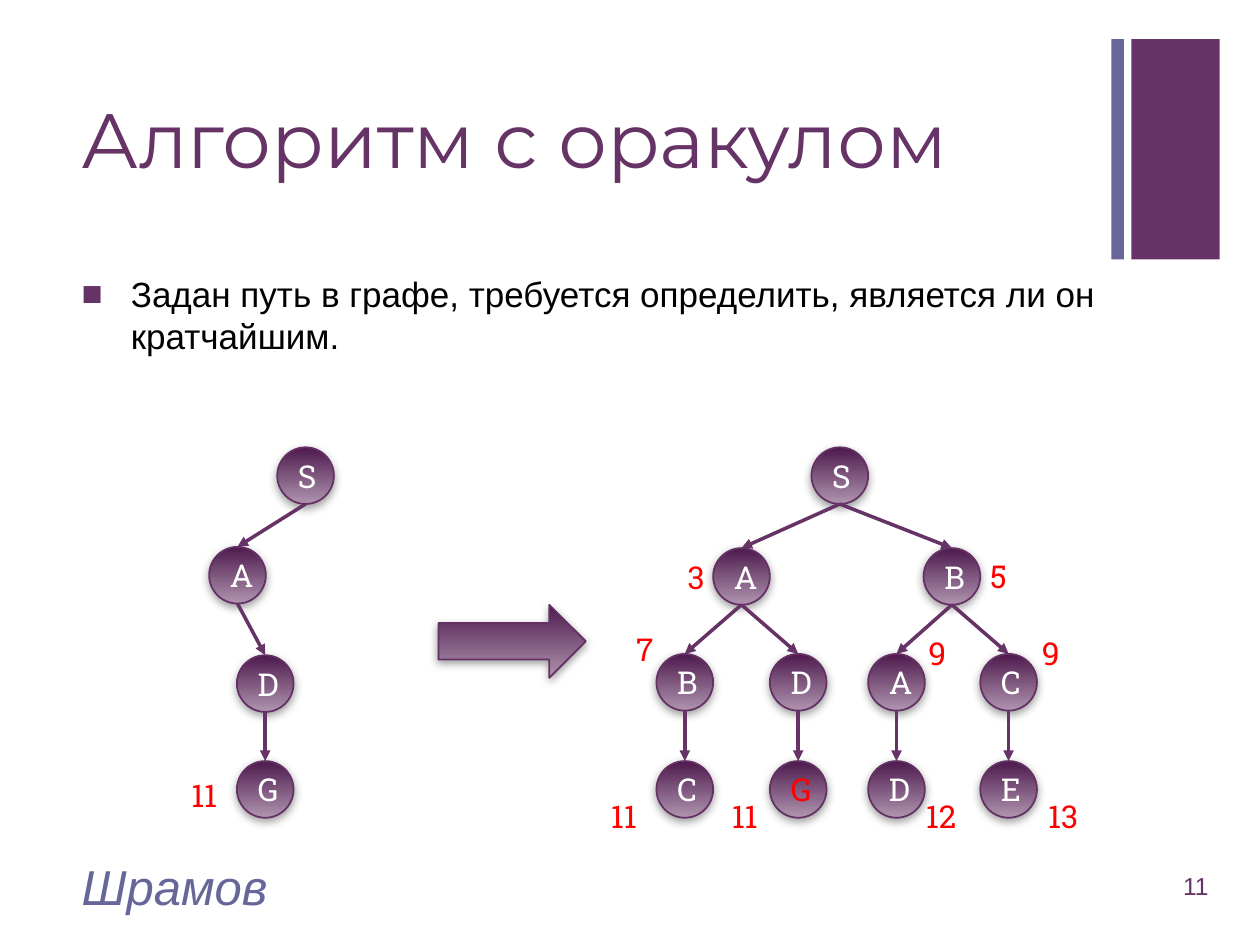
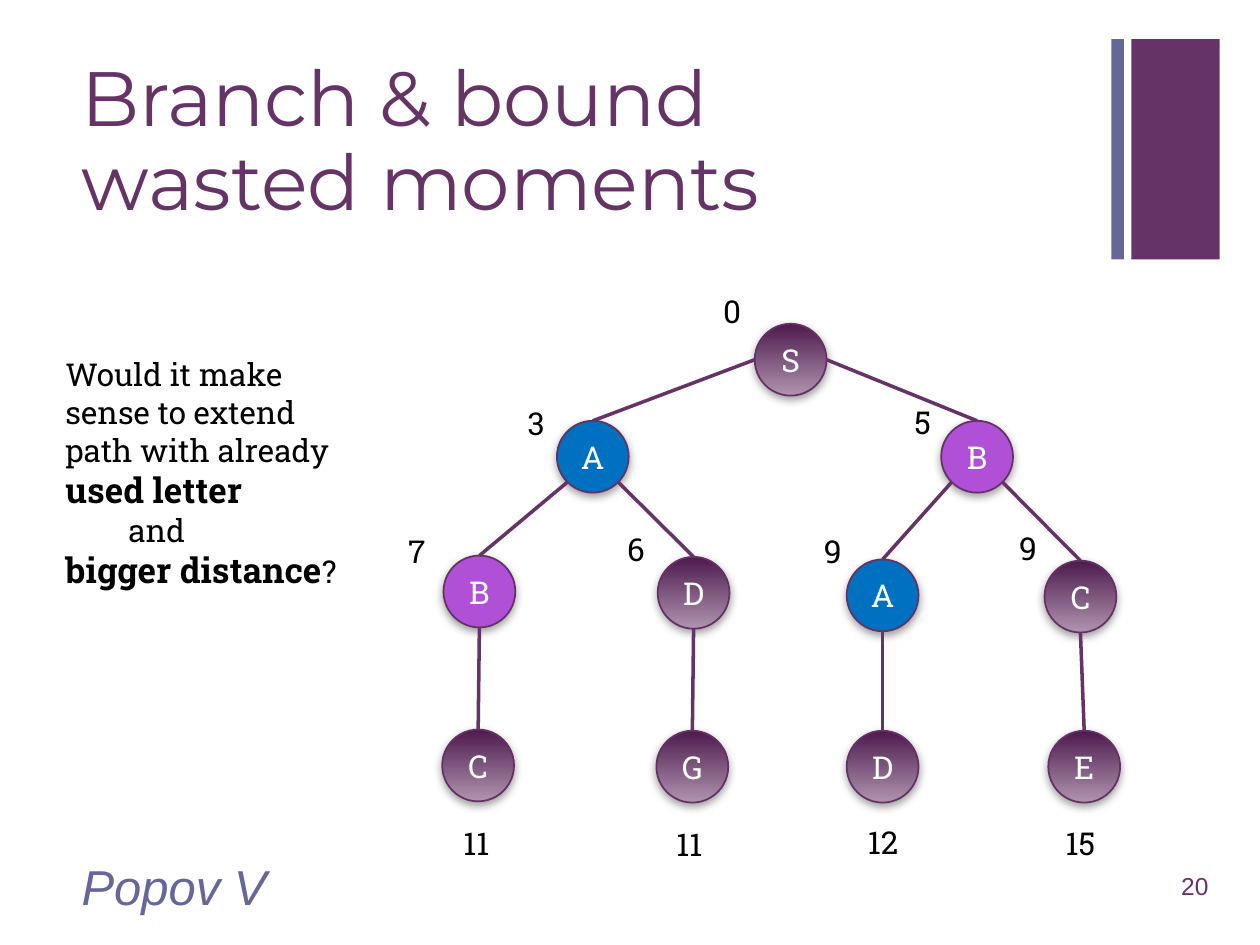
from math import cos, radians, sin

from lxml import etree
from pptx import Presentation
from pptx import util as u
from pptx.dml.color import RGBColor
from pptx.enum import shapes, text
from pptx.oxml import parse_xml
from pptx.oxml.ns import qn

PLUM, SLATE, OUTLINE = "663366", "666699", "653165"
GRADIENT = ("4D1A4D", "AF94AF")
BLUE, VIOLET = "0070C0", "B050D7"
RED, BLACK, WHITE = "FF0000", "000000", "FFFFFF"
HEADING, BODY, GRAPH = "Montserrat", "Arial", "Roboto Slab"
DRAWING = "http://schemas.openxmlformats.org/drawingml/2006/main"
SHADOW = f"""<a:effectLst xmlns:a="{DRAWING}">
  <a:outerShdw blurRad="63500" dist="25400" dir="5400000" rotWithShape="0">
    <a:srgbClr val="808080"><a:alpha val="75000"/></a:srgbClr>
  </a:outerShdw></a:effectLst>"""

# A node's key is the path from the root; its last letter is the node's name.
PATH_NODES = {"S": (2.2, 3.55), "SA": (1.66, 4.34), "SAD": (1.88, 5.2), "SADG": (1.88, 6.04)}
ORACLE_ROWS = (3.55, 4.35, 5.19, 6.04)
ORACLE_COLUMNS = {"S": 6.44, "SA": 5.66, "SB": 7.33,
                  "SAB": 5.21, "SAD": 6.11, "SBA": 6.89, "SBC": 7.78,
                  "SABC": 5.21, "SADG": 6.11, "SBAD": 6.89, "SBCE": 7.78}
ORACLE_NODES = {key: (left, ORACLE_ROWS[len(key) - 1]) for key, left in ORACLE_COLUMNS.items()}
ORACLE_DISTANCES = [("11", 1.42, 6.11), ("3", 5.36, 4.38), ("5", 7.76, 4.37), ("7", 4.95, 4.95),
                    ("9", 7.27, 4.98), ("9", 8.17, 4.98), ("11", 4.75, 6.28), ("11", 5.71, 6.28),
                    ("12", 7.25, 6.28), ("13", 8.22, 6.28)]
BRANCH_NODES = {"S": (5.99, 2.57), "SA": (4.42, 3.34), "SB": (7.47, 3.34),
                "SAB": (3.52, 4.41), "SAD": (5.22, 4.42), "SBA": (6.72, 4.44), "SBC": (8.29, 4.45),
                "SABC": (3.51, 5.79), "SADG": (5.21, 5.8), "SBAD": (6.72, 5.8), "SBCE": (8.32, 5.8)}
BRANCH_DISTANCES = [("0", 5.64, 2.27), ("3", 4.09, 3.16), ("5", 7.16, 3.15), ("7", 3.14, 4.17),
                    ("6", 4.88, 4.16), ("9", 6.44, 4.17), ("9", 7.99, 4.15), ("11", 3.58, 6.49),
                    ("11", 5.27, 6.5), ("12", 6.79, 6.48), ("15", 8.36, 6.49)]


def color(value):
    return RGBColor.from_string(value)


def box(left, top, width, height):
    return [u.Inches(value) for value in (left, top, width, height)]


def add_run(paragraph, words, size, font, fill, bold=False, italic=False):
    run = paragraph.add_run()
    run.text = words
    run.font.size = u.Pt(size)
    run.font.name = font
    run.font.color.rgb = color(fill)
    run.font.bold, run.font.italic = bold, italic


def add_text_frame(slide, place, anchor=text.MSO_ANCHOR.TOP):
    frame = slide.shapes.add_textbox(*box(*place)).text_frame
    frame.word_wrap = True
    frame.vertical_anchor = anchor
    return frame


def add_band(slide, place, fill):
    band = slide.shapes.add_shape(shapes.MSO_SHAPE.RECTANGLE, *box(*place))
    band.shadow.inherit = False
    band.fill.solid()
    band.fill.fore_color.rgb = color(fill)
    band.line.fill.background()


def add_title(slide, lines):
    title = slide.shapes.title
    title.left, title.top, title.width, title.height = box(0.55, 0.53, 8.26, 1.22)
    frame = title.text_frame
    frame.auto_size = text.MSO_AUTO_SIZE.NONE
    frame.vertical_anchor = text.MSO_ANCHOR.MIDDLE
    paragraph = frame.paragraphs[0]
    paragraph.alignment = text.PP_ALIGN.LEFT
    paragraph.line_spacing = 0.9
    for index, line in enumerate(lines):
        if index:
            paragraph.add_line_break()
        add_run(paragraph, line, 44, HEADING, PLUM)


def add_base_slide(presentation, title_lines, author, number):
    """Slide with the shared title, bands, author and page number."""
    slide = presentation.slides.add_slide(presentation.slide_layouts[5])
    add_band(slide, (8.98, 0.31, 0.7, 1.75), PLUM)
    add_band(slide, (8.82, 0.31, 0.1, 1.75), SLATE)
    add_title(slide, title_lines)
    middle = text.MSO_ANCHOR.MIDDLE
    page = add_text_frame(slide, (9.08, 6.83, 0.61, 0.4), middle).paragraphs[0]
    page.alignment = text.PP_ALIGN.RIGHT
    add_run(page, number, 14, BODY, PLUM)
    footer = add_text_frame(slide, (0.55, 6.83, 6.7, 0.4), middle).paragraphs[0]
    add_run(footer, author, 28, BODY, SLATE, italic=True)
    return slide


def add_bullet(slide, place, words):
    paragraph = add_text_frame(slide, place).paragraphs[0]
    paragraph.space_before = u.Pt(12)
    properties = paragraph._p.get_or_add_pPr()
    properties.set("marL", str(u.Inches(0.39)))
    properties.set("indent", str(u.Inches(-0.39)))
    bullet_color = etree.SubElement(properties, qn("a:buClr"))
    etree.SubElement(bullet_color, qn("a:srgbClr"), val=PLUM)
    etree.SubElement(properties, qn("a:buFont"), typeface=BODY)
    etree.SubElement(properties, qn("a:buChar"), char="■")
    add_run(paragraph, words, 20, BODY, BLACK)


def add_shaded_shape(slide, kind, place, fill=None):
    """Outlined shape with a soft shadow; a gradient unless a fill is given."""
    shape = slide.shapes.add_shape(kind, *box(*place))
    if fill:
        shape.fill.solid()
        shape.fill.fore_color.rgb = color(fill)
    else:
        shape.fill.gradient()
        shape.fill.gradient_angle = 270
        for stop, value in zip(shape.fill.gradient_stops, GRADIENT):
            stop.color.rgb = color(value)
        shape.fill.gradient_stops[0].position = 0
        shape.fill.gradient_stops[1].position = 1
    shape.line.color.rgb = color(OUTLINE)
    shape.line.width = u.Pt(1)
    shape._element.spPr.append(parse_xml(SHADOW))
    return shape


def add_node(slide, letter, left, top, size, fill=None, letter_color=WHITE):
    node = add_shaded_shape(slide, shapes.MSO_SHAPE.OVAL, (left, top, size, size), fill)
    node.text_frame.vertical_anchor = text.MSO_ANCHOR.MIDDLE
    paragraph = node.text_frame.paragraphs[0]
    paragraph.alignment = text.PP_ALIGN.CENTER
    add_run(paragraph, letter, 18, GRAPH, letter_color)
    return node


def add_edge(slide, parent, child, angle, arrow):
    """Line from the parent's rim, at an angle below horizontal, to the child's top."""
    side = -1 if child.left < parent.left else 1
    radius = parent.width / 2
    start_x = int(parent.left + radius + side * radius * cos(radians(angle)))
    start_y = int(parent.top + radius + radius * sin(radians(angle)))
    edge = slide.shapes.add_connector(shapes.MSO_CONNECTOR.STRAIGHT, start_x, start_y,
                                      child.left + child.width // 2, child.top)
    edge.end_connect(child, 0)
    edge.line.color.rgb = color(PLUM)
    edge.line.width = u.Pt(2)
    if arrow:
        etree.SubElement(edge.line._get_or_add_ln(), qn("a:tailEnd"), type="triangle")
    etree.SubElement(edge._element.spPr, qn("a:effectLst"))


def add_tree(slide, places, size, angles=(90, 90, 90), arrow=False, fills=None, letter_colors=None):
    """Nodes and edges; angles give the edge start for each level."""
    fills, letter_colors = fills or {}, letter_colors or {}
    nodes = {key: add_node(slide, key[-1], left, top, size, fills.get(key),
                           letter_colors.get(key, WHITE))
             for key, (left, top) in places.items()}
    for key, node in nodes.items():
        parent_key = key[:-1]
        if parent_key:
            add_edge(slide, nodes[parent_key], node, angles[len(parent_key) - 1], arrow)


def add_distances(slide, distances, fill):
    for words, left, top in distances:
        width = 0.34 if len(words) == 1 else 0.56
        frame = add_text_frame(slide, (left, top, width, 0.4))
        add_run(frame.paragraphs[0], words, 18, GRAPH, fill)


def add_question(slide):
    frame = add_text_frame(slide, (0.42, 2.77, 2.48, 1.99))
    lines = [[("Would it make sense to extend path with already", False)],
             [("used letter", True)],
             [("and", False)],
             [("bigger distance", True), ("?", False)]]
    for index, runs in enumerate(lines):
        paragraph = frame.add_paragraph() if index else frame.paragraphs[0]
        for words, bold in runs:
            add_run(paragraph, words, 20 if bold else 18, GRAPH, BLACK, bold)
    frame.paragraphs[2]._p.get_or_add_pPr().set("marL", str(u.Inches(0.5)))


def build_oracle_slide(presentation):
    slide = add_base_slide(presentation, ["Алгоритм с оракулом"], "Шрамов", "11")
    add_bullet(slide, (0.55, 2.11, 8.85, 0.9),
               "Задан путь в графе, требуется определить, является ли он кратчайшим.")
    add_tree(slide, PATH_NODES, 0.45, arrow=True)
    add_shaded_shape(slide, shapes.MSO_SHAPE.RIGHT_ARROW, (3.48, 4.8, 1.17, 0.58))
    add_tree(slide, ORACLE_NODES, 0.45, arrow=True, letter_colors={"SADG": RED})
    add_distances(slide, ORACLE_DISTANCES, RED)


def build_branch_slide(presentation):
    slide = add_base_slide(presentation, ["Branch & bound ", "wasted moments"], "Popov V", "20")
    add_tree(slide, BRANCH_NODES, 0.57, angles=(0, 45, 90),
             fills={"SA": BLUE, "SBA": BLUE, "SB": VIOLET, "SAB": VIOLET})
    add_distances(slide, BRANCH_DISTANCES, BLACK)
    add_question(slide)


def main():
    presentation = Presentation()
    presentation.slide_width, presentation.slide_height = u.Inches(10), u.Inches(7.5)
    build_oracle_slide(presentation)
    build_branch_slide(presentation)
    presentation.save("out.pptx")


if __name__ == "__main__":
    main()
